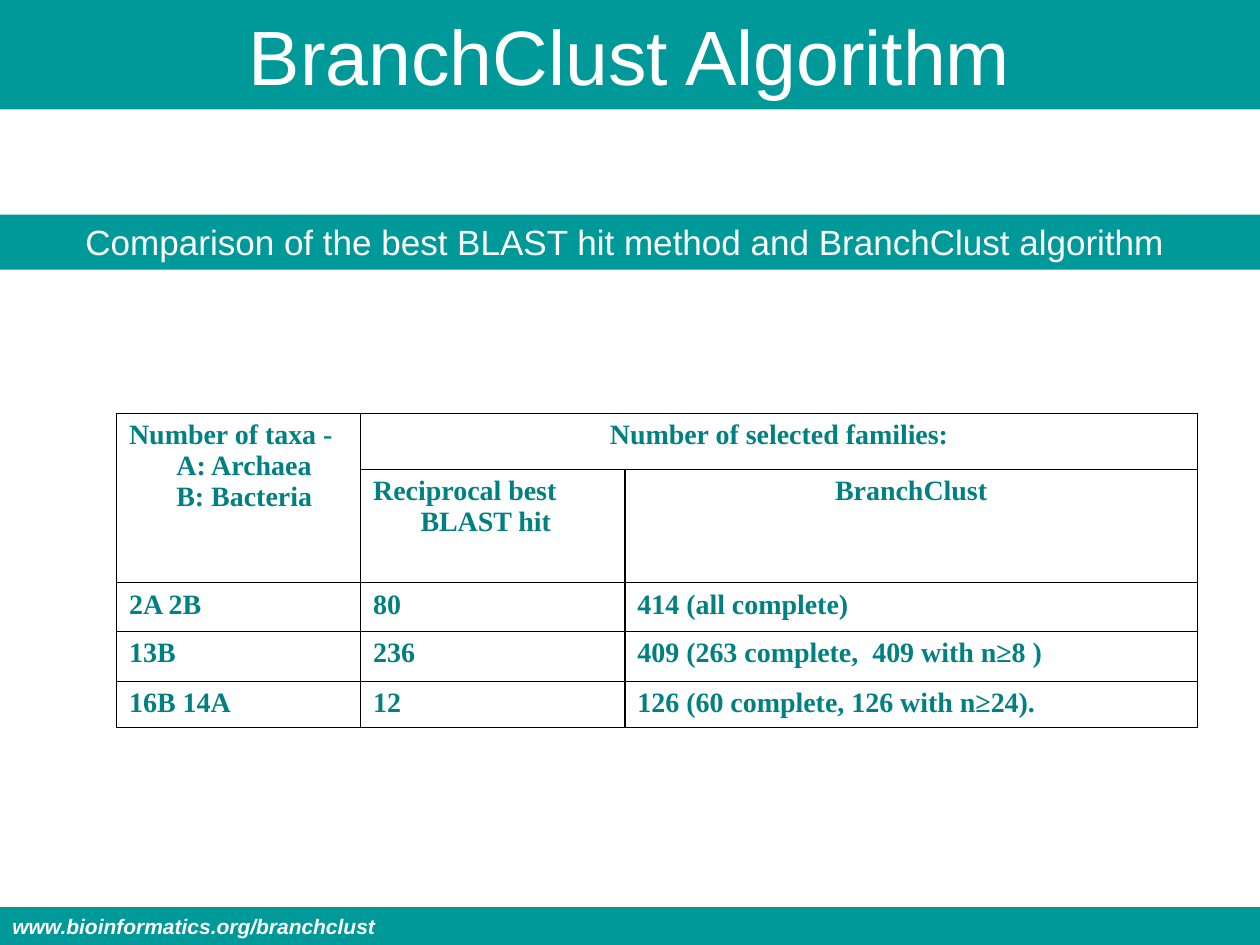
from dataclasses import dataclass
from lxml import etree
from pptx import Presentation
from pptx import util as u
from pptx.dml import color
from pptx.enum import shapes, text
from pptx.oxml import ns

Pt = u.Pt


@dataclass(frozen=True)
class Theme:
    band: str = "009999"
    light: str = "FFFFFF"
    ink: str = "008080"
    rule: str = "000000"
    sans: str = "Arial"
    serif: str = "Times New Roman"
    head: int = 44
    sub: int = 20
    body: int = 16
    foot: int = 12


def rgb(code):
    return color.RGBColor.from_string(code)


def write(frame, words, size, font, tint, bold=False, slant=False,
          center=False, hang=0):
    para = frame.paragraphs[0]
    para.text = words.replace("\n", "\v")
    para.alignment = text.PP_ALIGN.CENTER if center else text.PP_ALIGN.LEFT
    if hang:
        props = para._p.get_or_add_pPr()
        props.set("marL", str(Pt(hang)))
        props.set("indent", str(-Pt(hang)))
    for face in [para.font] + [run.font for run in para.runs]:
        face.size = Pt(size)
        face.name = font
        face.bold = bold
        face.italic = slant
        face.color.rgb = rgb(tint)


class Deck:
    def __init__(self, theme):
        self.theme = theme
        self.show = Presentation()
        self.show.slide_width, self.show.slide_height = Pt(720), Pt(540)
        self.slide = self.show.slides.add_slide(self.show.slide_layouts[6])

    def band(self, top, high, words, size, mid=False, **style):
        box = self.slide.shapes.add_shape(
            shapes.MSO_SHAPE.RECTANGLE, 0, Pt(top), Pt(720), Pt(high))
        box.shadow.inherit = False
        box.fill.solid()
        box.fill.fore_color.rgb = rgb(self.theme.band)
        box.line.fill.background()
        frame = box.text_frame
        frame.word_wrap = True
        anchor = text.MSO_ANCHOR
        frame.vertical_anchor = anchor.MIDDLE if mid else anchor.TOP
        if not mid:
            frame.auto_size = text.MSO_AUTO_SIZE.SHAPE_TO_FIT_TEXT
        write(frame, words, size, self.theme.sans, self.theme.light, **style)

    def edge(self, cell):
        props = cell._tc.get_or_add_tcPr()
        for spot, side in enumerate(("lnL", "lnR", "lnT", "lnB")):
            line = etree.Element(ns.qn("a:" + side), w=str(Pt(1)))
            fill = etree.SubElement(line, ns.qn("a:solidFill"))
            etree.SubElement(fill, ns.qn("a:srgbClr"), val=self.theme.rule)
            props.insert(spot, line)

    def table(self, left, top, cols, rows, data, spans, mids):
        grid = self.slide.shapes.add_table(
            len(rows), len(cols), Pt(left), Pt(top),
            Pt(sum(cols)), Pt(sum(rows))).table
        grid.first_row = grid.horz_banding = False
        for col, wide in zip(grid.columns, cols):
            col.width = Pt(wide)
        for row, high in zip(grid.rows, rows):
            row.height = Pt(high)
        for start, end in spans:
            grid.cell(*start).merge(grid.cell(*end))
        for r, line in enumerate(data):
            for c, words in enumerate(line):
                cell = grid.cell(r, c)
                cell.fill.background()
                self.edge(cell)
                if words:
                    write(cell.text_frame, words, self.theme.body,
                          self.theme.serif, self.theme.ink, bold=True,
                          center=(r, c) in mids, hang=27)

    def save(self):
        self.show.save("out.pptx")


def main():
    theme = Theme()
    deck = Deck(theme)
    deck.band(0, 62.6, "BranchClust Algorithm", theme.head,
              mid=True, center=True)
    deck.band(122.6, 31.5, "Comparison of the best BLAST hit method and "
              "BranchClust algorithm ", theme.sub, center=True)
    data = [
        ["Number of taxa - \nA: Archaea\nB: Bacteria",
         "Number of selected families:", ""],
        ["", "Reciprocal best BLAST hit", "BranchClust"],
        ["2A 2B", "80", "414 (all complete)"],
        ["13B", "236", "409 (263 complete,  409 with n≥8 )"],
        ["16B 14A", "12", "126 (60 complete, 126 with n≥24)."],
    ]
    deck.table(66.6, 236.2, [139.5, 151, 327.3], [32, 45.4, 27.8, 28.6, 26.4],
               data, spans=[((0, 0), (1, 0)), ((0, 1), (0, 2))],
               mids={(0, 1), (1, 2)})
    deck.band(518.4, 21.6, "www.bioinformatics.org/branchclust", theme.foot,
              bold=True, slant=True)
    deck.save()


if __name__ == "__main__":
    main()
